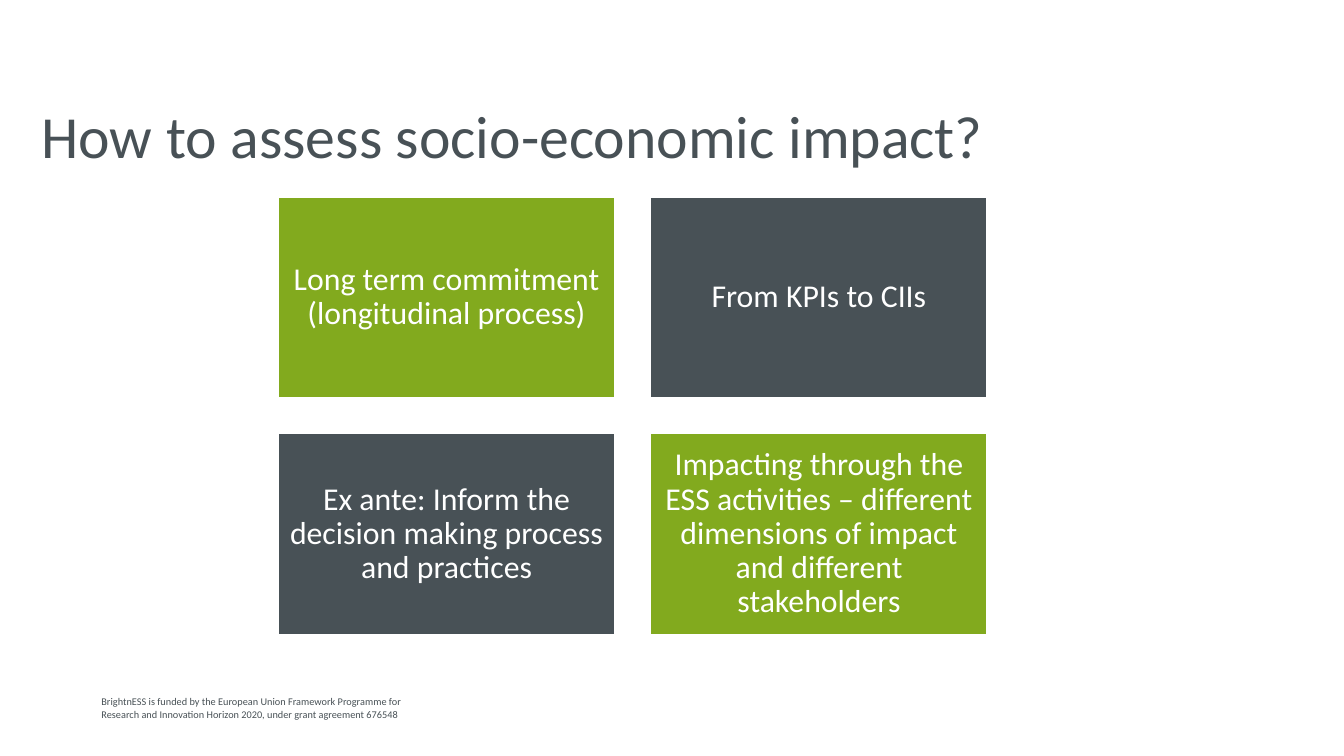
"""Build a slide with a title, a two-by-two grid of statements and a funding note."""
from pptx import Presentation
from pptx.dml.color import RGBColor
from pptx.enum.shapes import MSO_SHAPE
from pptx.enum.text import MSO_ANCHOR, PP_ALIGN
from pptx.util import Pt

RECTANGLE = MSO_SHAPE.RECTANGLE
MIDDLE, TOP = MSO_ANCHOR.MIDDLE, MSO_ANCHOR.TOP
LEFT, CENTER = PP_ALIGN.LEFT, PP_ALIGN.CENTER
PX = 9525
FONT = "Calibri"
GREEN, SLATE, WHITE = "82AA1E", "485156", "FFFFFF"
TILE_LEFT, TILE_TOP = 198, 140
TILE_WIDTH, TILE_HEIGHT = 242, 145
GAP = 24
TILE_MARGIN = 7


def color(value):
    return RGBColor.from_string(value)


def write(box, text, size, ink, align, anchor):
    frame = box.text_frame
    frame.word_wrap = True
    frame.vertical_anchor = anchor
    frame.text = text
    for para in frame.paragraphs:
        para.alignment = align
        for span in para.runs:
            span.font.name = FONT
            span.font.size = Pt(size)
            span.font.color.rgb = color(ink)
    return frame


deck = Presentation()
deck.slide_width, deck.slide_height = 960 * PX, 540 * PX
page = deck.slides.add_slide(deck.slide_layouts[5])

title = page.shapes.title
title.left, title.top = 20 * PX, 51 * PX
title.width, title.height = 815 * PX, 90 * PX
write(title, "How to assess socio-economic impact?", 32, SLATE, LEFT, MIDDLE)

statements = [
    ("Long term commitment (longitudinal process)", GREEN),
    ("From KPIs to CIIs", SLATE),
    ("Ex ante: Inform the decision making process and practices", SLATE),
    ("Impacting through the ESS activities – different dimensions of impact "
     "and different stakeholders", GREEN),
]
for index, (statement, fill) in enumerate(statements):
    row, column = divmod(index, 2)
    tile = page.shapes.add_shape(
        RECTANGLE,
        (TILE_LEFT + column * (TILE_WIDTH + GAP)) * PX,
        (TILE_TOP + row * (TILE_HEIGHT + GAP)) * PX,
        TILE_WIDTH * PX, TILE_HEIGHT * PX)
    tile.shadow.inherit = False
    tile.fill.solid()
    tile.fill.fore_color.rgb = color(fill)
    tile.line.color.rgb = color(WHITE)
    tile.line.width = Pt(2)
    frame = write(tile, statement, 17, WHITE, CENTER, MIDDLE)
    frame.margin_left = frame.margin_right = TILE_MARGIN * PX
    frame.margin_top = frame.margin_bottom = TILE_MARGIN * PX
    frame.paragraphs[0].line_spacing = 0.9

note = page.shapes.add_textbox(63 * PX, 492 * PX, 263 * PX, 36 * PX)
write(note,
      "BrightnESS is funded by the European Union Framework Programme for\n"
      "Research and Innovation Horizon 2020, under grant agreement 676548",
      5.5, SLATE, LEFT, TOP)

deck.save("out.pptx")
